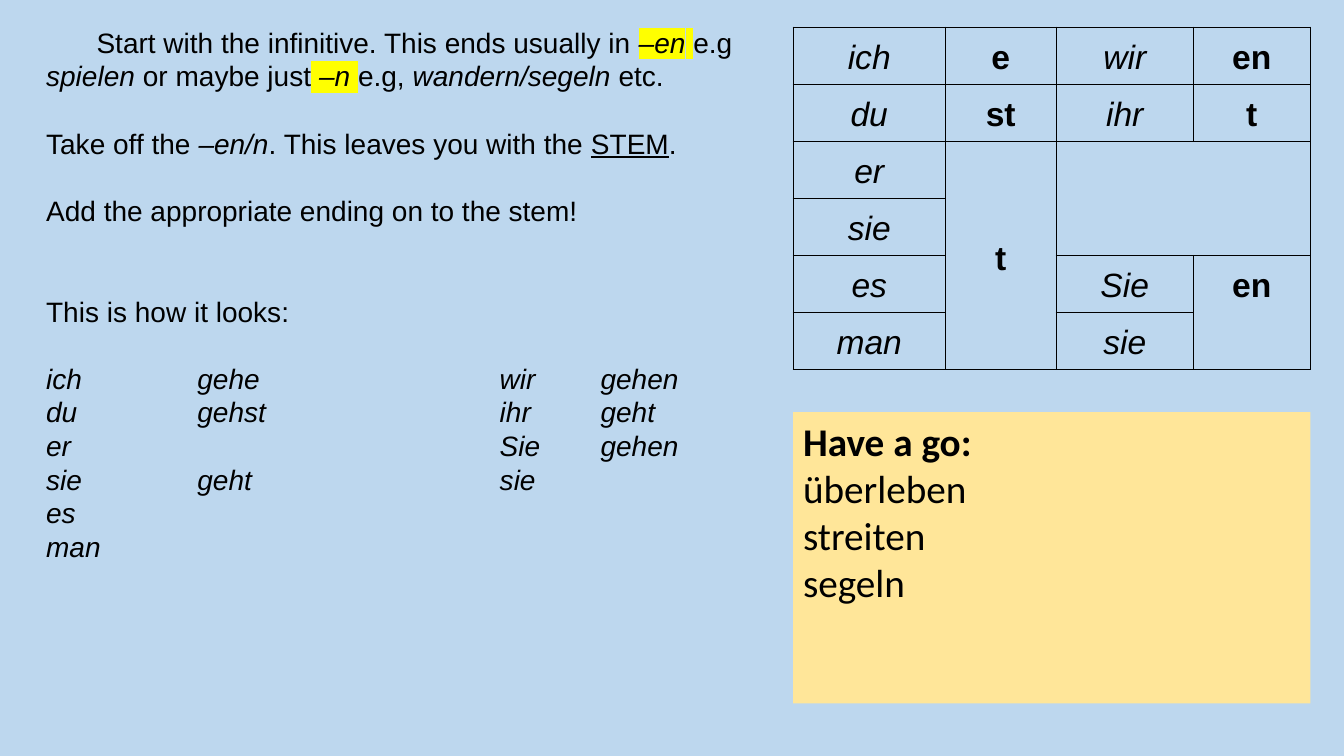
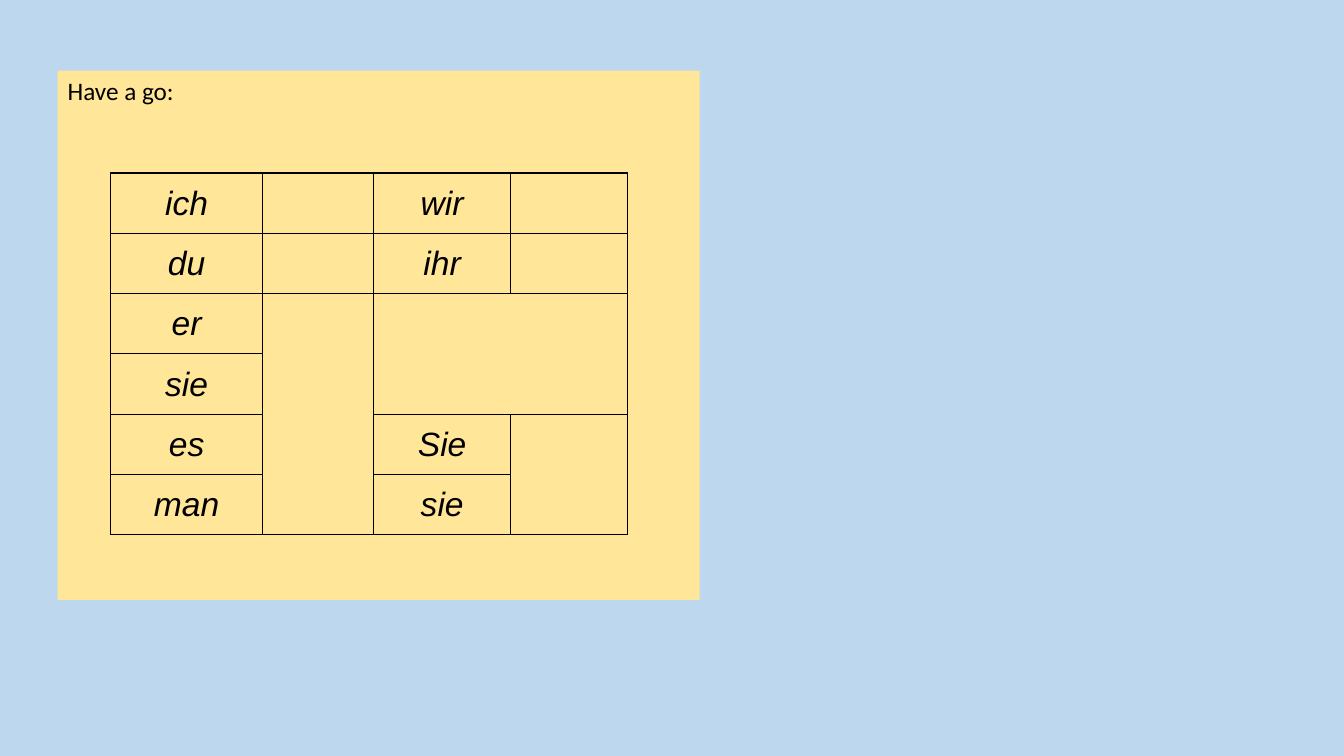
from lxml import etree
from pptx import Presentation
from pptx.dml.color import RGBColor
from pptx.enum.shapes import MSO_SHAPE
from pptx.enum.text import MSO_ANCHOR, PP_ALIGN
from pptx.oxml.ns import qn
from pptx.util import Pt

RECTANGLE = MSO_SHAPE.RECTANGLE
TOP, MIDDLE = MSO_ANCHOR.TOP, MSO_ANCHOR.MIDDLE
LEFT, CENTER = PP_ALIGN.LEFT, PP_ALIGN.CENTER

SKY, SAND, BLACK, YELLOW = "BDD7EE", "FFE699", "000000", "FFFF00"
SANS, ROUNDED = "Arial", "Calibri"
BLANK_LAYOUT = 6

RIGHT_COLUMN, RIGHT_WIDTH = 566.6, 369.4
COLUMN_WIDTHS = (108.6, 79.3, 97.9, 83.6)
LINE_HEIGHT = 24
TAB_STOPS = (108, 324, 396)

PRONOUNS = {
    (0, 0): "ich", (1, 0): "du", (2, 0): "er", (3, 0): "sie", (4, 0): "es", (5, 0): "man",
    (0, 2): "wir", (1, 2): "ihr", (4, 2): "Sie", (5, 2): "sie",
}
ENDINGS = {(0, 1): "e", (1, 1): "st", (2, 1): "t", (0, 3): "en", (1, 3): "t", (4, 3): "en"}
MERGES = (((2, 1), (5, 1)), ((2, 2), (3, 3)), ((4, 3), (5, 3)))

ITALIC = {"italic": True}
MARKED = {"highlight": YELLOW}
# Each rule: space before in lines, first-line indent, runs.
RULES = (
    (0, 36, (
        ("Start with the infinitive. This ends usually in ", {}),
        ("–en", ITALIC | MARKED), (" ", MARKED), ("e.g ", {}),
        ("spielen ", ITALIC), ("or maybe just", {}),
        (" ", MARKED), ("–n", ITALIC | MARKED), (" ", MARKED), ("e.g, ", {}),
        ("wandern/segeln ", ITALIC), ("etc.", {}),
    )),
    (1, 0, (
        ("Take off the ", {}), ("–en/n", ITALIC), (". This leaves you with the ", {}),
        ("STEM", {"underline": True}), (".", {}),
    )),
    (1, 0, (("Add the appropriate ending on to the stem!", {}),)),
    (2, 0, (("This is how it looks:", {}),)),
)
CONJUGATION = (
    "ich\tgehe\twir\tgehen",
    "du\tgehst\tihr\tgeht",
    "er\t\tSie\tgehen",
    "sie\tgeht\tsie",
    "es",
    "man",
)


def color(value):
    return RGBColor.from_string(value)


def add_text(paragraph, text, size=20, font=SANS, bold=False, italic=False,
             underline=False, highlight=None):
    run = paragraph.add_run()
    run.text = text
    run.font.size = Pt(size)
    run.font.bold, run.font.italic, run.font.underline = bold, italic, underline
    run.font.color.rgb = color(BLACK)
    if highlight:
        mark = etree.Element(qn("a:highlight"))
        etree.SubElement(mark, qn("a:srgbClr"), val=highlight)
        run.font.fill._xPr.find(qn("a:solidFill")).addnext(mark)
    run.font.name = font


def next_paragraph(frame):
    """Return the empty first paragraph, or a new one after the last."""
    first = frame.paragraphs[0]
    return frame.add_paragraph() if first.runs else first


def set_tab_stops(paragraph, positions):
    tab_list = etree.SubElement(paragraph._p.get_or_add_pPr(), qn("a:tabLst"))
    for position in positions:
        etree.SubElement(tab_list, qn("a:tab"), pos=str(Pt(position)), algn="l")


def set_borders(cell):
    properties = cell._tc.get_or_add_tcPr()
    for side in ("lnL", "lnR", "lnT", "lnB"):
        line = etree.SubElement(properties, qn(f"a:{side}"), w=str(Pt(1)))
        fill = etree.SubElement(line, qn("a:solidFill"))
        etree.SubElement(fill, qn("a:srgbClr"), val=BLACK)


def add_endings_table(slide, left, top, row_height, endings):
    row_count, column_count = 6, len(COLUMN_WIDTHS)
    table = slide.shapes.add_table(
        row_count, column_count, Pt(left), Pt(top),
        Pt(sum(COLUMN_WIDTHS)), Pt(row_height * row_count)).table
    table.first_row = table.horz_banding = False
    for column, width in zip(table.columns, COLUMN_WIDTHS):
        column.width = Pt(width)
    for row in table.rows:
        row.height = Pt(row_height)
    for cell in table.iter_cells():
        set_borders(cell)
        cell.fill.background()
        cell.margin_left = cell.margin_right = Pt(5)
        cell.margin_top = cell.margin_bottom = Pt(4.5)
    for start, end in MERGES:
        table.cell(*start).merge(table.cell(*end))
    for texts, style in ((PRONOUNS, ITALIC), (endings, {"bold": True})):
        for position, text in texts.items():
            paragraph = table.cell(*position).text_frame.paragraphs[0]
            paragraph.alignment = CENTER
            paragraph.line_spacing = 1.15
            add_text(paragraph, text, size=24, **style)
    table.cell(2, 1).vertical_anchor = MIDDLE


def add_practice_panel(slide, left, top, width, height, heading, verbs=(), size=18, bold=False):
    panel = slide.shapes.add_shape(RECTANGLE, Pt(left), Pt(top), Pt(width), Pt(height))
    panel.shadow.inherit = False
    panel.fill.solid()
    panel.fill.fore_color.rgb = color(SAND)
    panel.line.fill.background()
    frame = panel.text_frame
    frame.word_wrap = True
    frame.vertical_anchor = TOP
    for text, is_bold in ((heading, bold), *((verb, False) for verb in verbs)):
        paragraph = next_paragraph(frame)
        paragraph.alignment = LEFT
        add_text(paragraph, text, size=size, font=ROUNDED, bold=is_bold)


def add_rules(slide, left, top, width, height):
    frame = slide.shapes.add_textbox(Pt(left), Pt(top), Pt(width), Pt(height)).text_frame
    frame.word_wrap = True
    frame.margin_left = frame.margin_right = frame.margin_top = frame.margin_bottom = 0
    for gap_lines, indent, runs in RULES:
        paragraph = next_paragraph(frame)
        paragraph.line_spacing = Pt(LINE_HEIGHT)
        paragraph.space_before = Pt(gap_lines * LINE_HEIGHT)
        paragraph._p.get_or_add_pPr().set("indent", str(Pt(indent)))
        for text, style in runs:
            add_text(paragraph, text, **style)
    for index, line in enumerate(CONJUGATION):
        paragraph = next_paragraph(frame)
        paragraph.line_spacing = Pt(LINE_HEIGHT)
        paragraph.space_before = Pt(0 if index else LINE_HEIGHT)
        set_tab_stops(paragraph, TAB_STOPS)
        add_text(paragraph, line, italic=True)


def build_explanation_slide(slide):
    add_endings_table(slide, RIGHT_COLUMN, 19.4, 40.8, ENDINGS)
    add_rules(slide, 33, 18, 526, 384)
    add_practice_panel(slide, RIGHT_COLUMN, 294.5, RIGHT_WIDTH, 208, "Have a go:",
                       ("überleben", "streiten", "segeln"), size=28, bold=True)


def build_practice_slide(slide):
    left, top = 41.2, 50.5
    add_practice_panel(slide, left, top, 458.5, 378, "Have a go:")
    add_endings_table(slide, left + 37.8, top + 73, 43.1, {})


def main():
    presentation = Presentation()
    presentation.slide_width, presentation.slide_height = Pt(960), Pt(540)
    background = presentation.slide_master.background.fill
    background.solid()
    background.fore_color.rgb = color(SKY)
    layout = presentation.slide_layouts[BLANK_LAYOUT]
    for build in (build_explanation_slide, build_practice_slide):
        build(presentation.slides.add_slide(layout))
    presentation.save("out.pptx")


if __name__ == "__main__":
    main()
